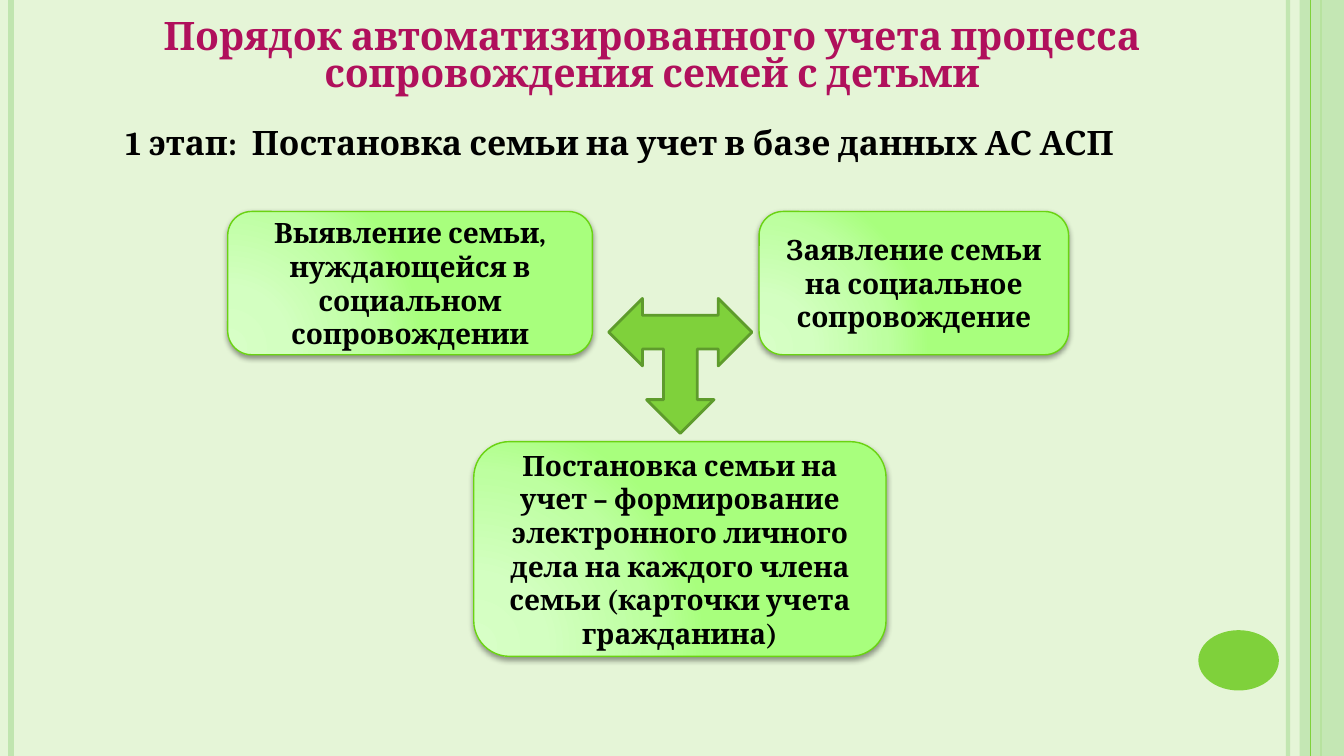
from dataclasses import dataclass

from lxml import etree
from pptx import Presentation
from pptx.dml.color import RGBColor
from pptx.enum.shapes import MSO_CONNECTOR, MSO_SHAPE
from pptx.enum.text import MSO_ANCHOR, MSO_AUTO_SIZE, PP_ALIGN
from pptx.oxml.ns import qn
from pptx.util import Cm, Pt

STRAIGHT = MSO_CONNECTOR.STRAIGHT
RECT, OVAL = MSO_SHAPE.RECTANGLE, MSO_SHAPE.OVAL
ROUND_RECT, THREE_WAY = MSO_SHAPE.ROUNDED_RECTANGLE, MSO_SHAPE.LEFT_RIGHT_UP_ARROW
LEFT, CENTER = PP_ALIGN.LEFT, PP_ALIGN.CENTER
TOP, MIDDLE = MSO_ANCHOR.TOP, MSO_ANCHOR.MIDDLE
GROW = MSO_AUTO_SIZE.SHAPE_TO_FIT_TEXT

WIDTH, HEIGHT = 33.87, 19.05


@dataclass(frozen=True)
class Theme:
    font: str = "Cambria"
    background: str = "E5F5D7"
    title: str = "B0105C"
    text: str = "000000"
    green: str = "7FD13B"
    dark_green: str = "5E9B2C"
    pale_green: str = "C0E5AF"
    box_line: str = "6AD312"
    box_stops: tuple = ((0, "D7FFC6"), (30, "D3FFC1"), (75, "BDFFA0"), (100, "A8FF7D"))
    title_size: int = 28
    heading_size: int = 24
    box_size: int = 20


def rgb(value):
    return RGBColor.from_string(value)


def add_xml(parent, tag, **attrs):
    return etree.SubElement(parent, qn(tag), {k: str(v) for k, v in attrs.items()})


class SlideBuilder:
    def __init__(self, slide, theme):
        self.s, self.theme = slide, theme
        fill = slide.background.fill
        fill.solid()
        fill.fore_color.rgb = rgb(theme.background)

    def set_alpha(self, part, percent):
        for color in part.iter(qn("a:srgbClr")):
            add_xml(color, "a:alpha", val=percent * 1000)

    def vertical_line(self, x, color, width, alpha=100):
        line = self.s.shapes.add_connector(STRAIGHT, Cm(x), 0, Cm(x), Cm(HEIGHT))
        line.line.color.rgb = rgb(color)
        line.line.width = Pt(width)
        sp_pr = line._element.spPr
        if alpha < 100:
            self.set_alpha(sp_pr, alpha)
        add_xml(sp_pr, "a:effectLst")

    def shape(self, kind, at, fill, line=None, width=1, alpha=100):
        sp = self.s.shapes.add_shape(kind, *map(Cm, at))
        sp.shadow.inherit = False
        sp.fill.solid()
        sp.fill.fore_color.rgb = rgb(fill)
        if alpha < 100:
            self.set_alpha(sp._element.spPr, alpha)
        if line:
            sp.line.color.rgb = rgb(line)
            sp.line.width = Pt(width)
        else:
            sp.line.fill.background()
        return sp

    def put_text(self, sp, text, size, color, align=CENTER, anchor=MIDDLE, spacing=None):
        tf = sp.text_frame
        tf.word_wrap = True
        tf.vertical_anchor = anchor
        p = tf.paragraphs[0]
        p.alignment = align
        if spacing:
            p.line_spacing = Pt(spacing)
        r = p.add_run()
        r.text = text
        style = {"name": self.theme.font, "size": Pt(size), "bold": True}
        for name, value in style.items():
            setattr(r.font, name, value)
        r.font.color.rgb = rgb(color)

    def text_box(self, at, text, size, color, **layout):
        sp = self.s.shapes.add_textbox(*map(Cm, at))
        self.put_text(sp, text, size, color, **layout)
        sp.text_frame.auto_size = GROW

    def box(self, at, text):
        t = self.theme
        sp = self.shape(ROUND_RECT, at, t.background, t.box_line)
        sp_pr = sp._element.spPr
        # Radial gradient, lightest at the lower left
        solid = sp_pr.find(qn("a:solidFill"))
        grad = etree.Element(qn("a:gradFill"), rotWithShape="1")
        stops = add_xml(grad, "a:gsLst")
        for pos, color in t.box_stops:
            add_xml(add_xml(stops, "a:gs", pos=pos * 1000), "a:srgbClr", val=color)
        circle = add_xml(grad, "a:path", path="circle")
        add_xml(circle, "a:fillToRect", l=5000, t=100000, r=120000, b=10000)
        sp_pr.replace(solid, grad)
        # Soft shadow below
        shadow = add_xml(sp_pr.find(qn("a:effectLst")), "a:outerShdw",
                         blurRad=Pt(4), dist=Pt(2), dir=5400000, rotWithShape=0)
        add_xml(shadow, "a:srgbClr", val=t.text)
        self.set_alpha(shadow, 40)
        self.put_text(sp, text, t.box_size, t.text)


def main():
    prs = Presentation()
    prs.slide_width, prs.slide_height = Cm(WIDTH), Cm(HEIGHT)
    t = Theme()
    b = SlideBuilder(prs.slides.add_slide(prs.slide_layouts[6]), t)

    # Side decoration
    b.vertical_line(32.46, t.pale_green, 3, alpha=93)
    b.vertical_line(0.28, t.pale_green, 4.5)
    b.vertical_line(33.3, t.green, 1.5)
    b.shape(RECT, (32.75, 0, 1.12, HEIGHT), t.pale_green, alpha=87)
    b.vertical_line(33.02, t.green, 0.75)
    b.shape(OVAL, (30.2, 15.88, 2.03, 1.52), t.green)

    # Title and stage heading
    b.text_box((0.74, 0.33, 31.39, 2.26),
               "Порядок автоматизированного учета процесса сопровождения семей с детьми",
               t.title_size, t.title, spacing=27)
    b.text_box((2.92, 2.95, 26.59, 1.27),
               "1 этап:  Постановка семьи на учет в базе данных АС АСП",
               t.heading_size, t.text, align=LEFT, anchor=TOP)

    # Two starting points and the resulting step
    top, height = 5.33, 3.61
    b.box((19.13, top, 7.8, height), "Заявление семьи на социальное сопровождение")
    b.box((5.74, top, 9.19, height),
          "Выявление семьи, нуждающейся в социальном сопровождении")
    b.box((11.94, 11.13, 10.39, 5.41),
          "Постановка семьи на учет – формирование электронного личного дела "
          "на каждого члена семьи (карточки учета гражданина)")

    # Arrow between the three boxes
    arrow = b.shape(THREE_WAY, (15.34, 7.52, 3.61, 3.4), t.green, t.dark_green, 2)
    arrow.rotation = 180

    prs.save("out.pptx")


if __name__ == "__main__":
    main()
